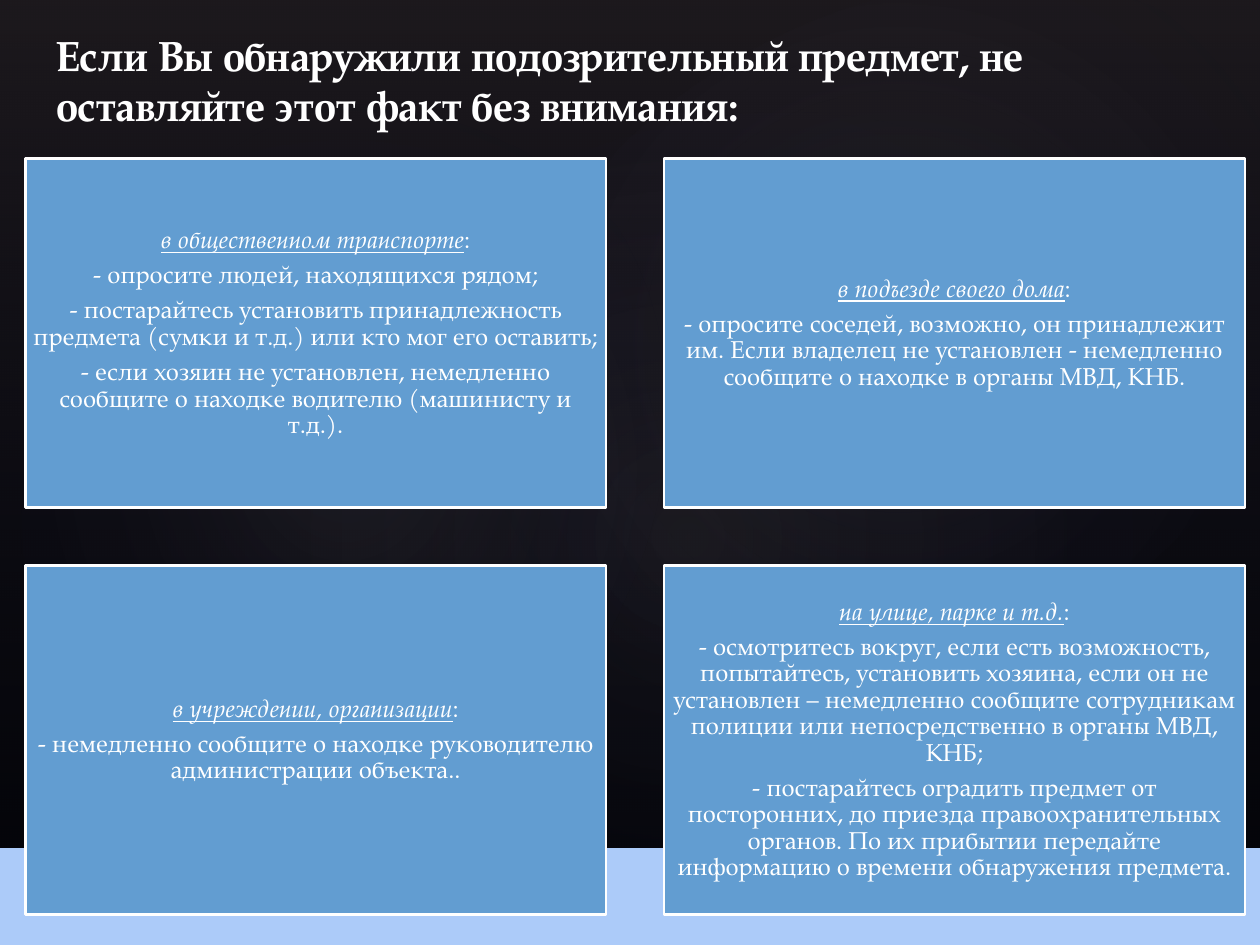
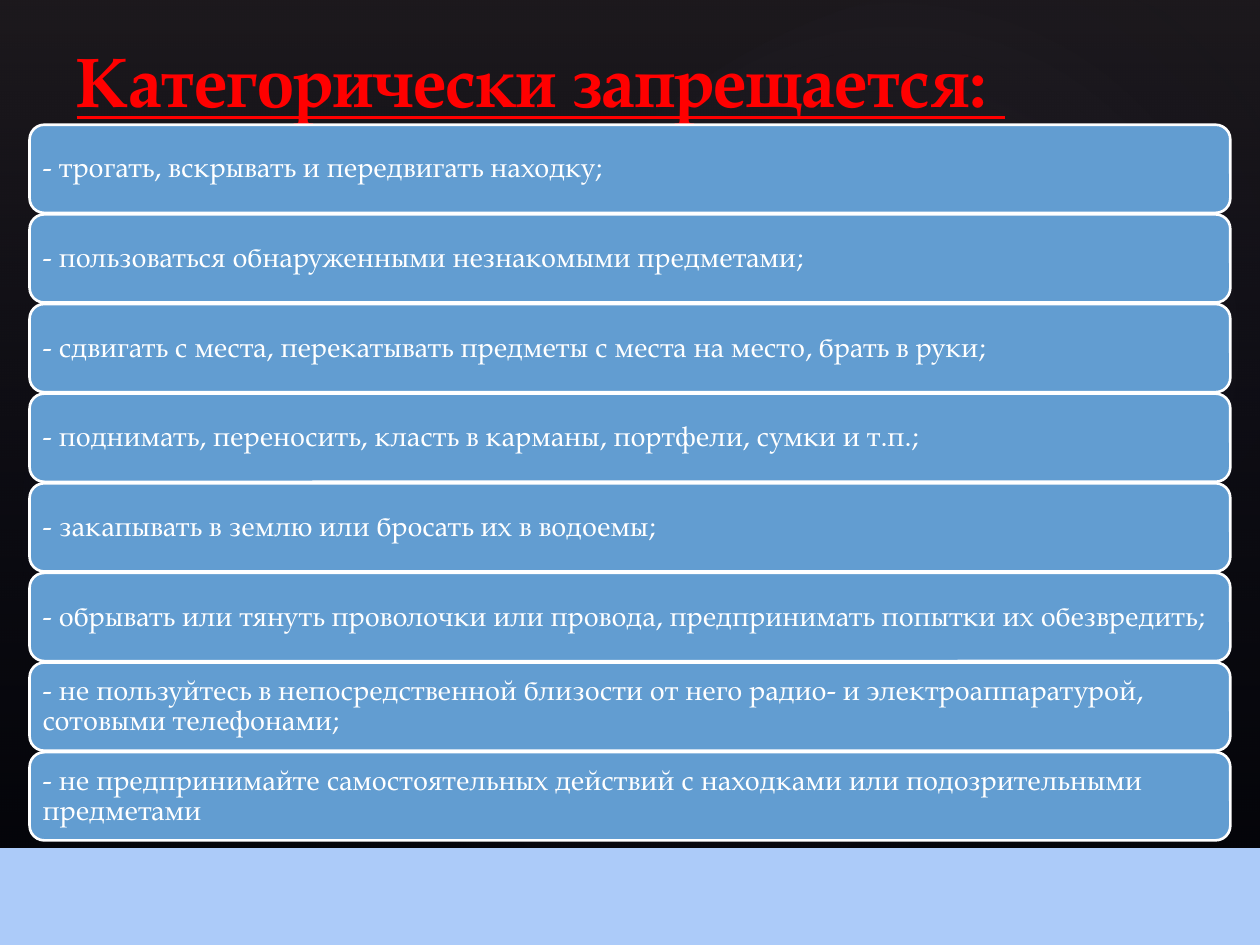
from pptx import Presentation
from pptx.dml.color import RGBColor
from pptx.enum.shapes import MSO_SHAPE as Preset
from pptx.enum.text import MSO_ANCHOR as Anchor, PP_ALIGN as Align
from pptx.oxml import parse_xml
from pptx.oxml.ns import nsdecls
from pptx.util import Inches, Pt

# Content
SAFETY_TITLE = "Если Вы обнаружили подозрительный предмет, не оставляйте этот факт без внимания:"
PLACES = [
    ("в общественном транспорте", [
        "- опросите людей, находящихся рядом;",
        "- постарайтесь установить принадлежность предмета (сумки и т.д.) или кто мог его оставить;",
        "- если хозяин не установлен, немедленно сообщите о находке водителю (машинисту и т.д.).",
    ]),
    ("в подъезде своего дома", [
        "- опросите соседей, возможно, он принадлежит им. Если владелец не установлен - "
        "немедленно сообщите о находке в органы МВД, КНБ.",
    ]),
    ("в учреждении, организации", [
        "- немедленно сообщите о находке руководителю администрации объекта..",
    ]),
    ("на улице, парке и т.д.", [
        "- осмотритесь вокруг, если есть возможность, попытайтесь, установить хозяина, если он "
        "не установлен – немедленно сообщите сотрудникам полиции или непосредственно в органы "
        "МВД, КНБ;",
        "- постарайтесь оградить предмет от посторонних, до приезда правоохранительных органов. "
        "По их прибытии передайте информацию о времени обнаружения предмета.",
    ]),
]
BAN_TITLE = "Категорически запрещается: "
BANS = [
    "- трогать, вскрывать и передвигать находку;",
    "- пользоваться обнаруженными незнакомыми предметами;",
    "- сдвигать с места, перекатывать предметы с места на место, брать в руки;",
    "- поднимать, переносить, класть в карманы, портфели, сумки и т.п.;",
    "- закапывать в землю или бросать их в водоемы;",
    "- обрывать или тянуть проволочки или провода, предпринимать попытки их обезвредить;",
    "- не пользуйтесь в непосредственной близости от него радио- и электроаппаратурой, "
    "сотовыми телефонами;",
    "- не предпринимайте самостоятельных действий с находками или подозрительными предметами",
]

# Shared style
FONT = "TeX Gyre Pagella"
BLACK = RGBColor(0x00, 0x00, 0x00)
WHITE = RGBColor(0xFF, 0xFF, 0xFF)
RED = RGBColor(0xFF, 0x00, 0x00)
BLUE = RGBColor(0x62, 0x9D, 0xD1)
PALE_BLUE = RGBColor(0xAC, 0xCB, 0xF9)
MAUVE = RGBColor(0x50, 0x46, 0x52)
LILAC = RGBColor(0xC4, 0xBC, 0xC6)
NAVY = RGBColor(0x24, 0x28, 0x52)
SLIDE_WIDTH, SLIDE_HEIGHT = 10, 7.5
BAND_HEIGHT = 0.76

# Glows: box, rotation, opacity of the centre in percent
GLOWS = [
    ((1.5, 1.14, 7.92, 6.24), 328.7, 7),
    ((-0.3, 1.28, 6.06, 4.9), 294.3, 8),
    ((3.58, 0.13, 7.09, 5.2), 328.7, 8),
]

# Grid of places and stack of bans
CARD_LEFT, CARD_TOP, CARD_WIDTH, CARD_HEIGHT, CARD_GAP = 0.2, 1.26, 4.61, 2.77, 0.46
CARD_COLUMNS = 2
ROW_TOP, LAST_ROW_TOP, ROW_WIDTH, ROW_HEIGHT = 0.99, 5.97, 9.53, 0.7


def add_shape(slide, preset, box, fill=None, line=None):
    shape = slide.shapes.add_shape(preset, *map(Inches, box))
    shape.shadow.inherit = False
    if fill is not None:
        shape.fill.solid()
        shape.fill.fore_color.rgb = fill
    if line is None:
        shape.line.fill.background()
    else:
        shape.line.color.rgb = line
        shape.line.width = Pt(1.5)
    return shape


def set_gradient(shape, stops, direction):
    """Replace the fill; stops are (position, colour, opacity) in percent."""
    stop_xml = "".join(
        f'<a:gs pos="{position * 1000}"><a:srgbClr val="{colour}">'
        f'<a:alpha val="{opacity * 1000}"/></a:srgbClr></a:gs>'
        for position, colour, opacity in stops)
    gradient = parse_xml(f'<a:gradFill {nsdecls("a")} rotWithShape="1">'
                         f'<a:gsLst>{stop_xml}</a:gsLst>{direction}</a:gradFill>')
    shape.fill.background()
    properties = shape.fill._xPr
    properties.replace(properties.find("{*}noFill"), gradient)


def write_text(shape, paragraphs, size, colour=WHITE, align=Align.LEFT, anchor=Anchor.MIDDLE,
               inset=None, line_spacing=None, space_after=None, **font_format):
    """Each paragraph is a list of (text, run format) pairs."""
    frame = shape.text_frame
    frame.word_wrap = True
    frame.vertical_anchor = anchor
    if inset is not None:
        frame.margin_left = frame.margin_right = Inches(inset)
        frame.margin_top = frame.margin_bottom = Inches(inset)
    for index, runs in enumerate(paragraphs):
        paragraph = frame.add_paragraph() if index else frame.paragraphs[0]
        paragraph.alignment = align
        paragraph.line_spacing = line_spacing
        if space_after is not None:
            paragraph.space_after = Pt(space_after)
        for text, run_format in runs:
            run = paragraph.add_run()
            run.text = text
            run.font.name = FONT
            run.font.size = Pt(size)
            run.font.color.rgb = colour
            for name, value in {**font_format, **run_format}.items():
                setattr(run.font, name, value)


def add_panel(slide, preset, box, paragraphs, size, **text_format):
    panel = add_shape(slide, preset, box, fill=BLUE, line=WHITE)
    write_text(panel, paragraphs, size, line_spacing=0.9, space_after=0.35 * size, **text_format)


def add_base_slide(presentation, title, title_box, size, **title_format):
    """Dark backdrop with glows, the title and the bottom band."""
    slide = presentation.slides.add_slide(presentation.slide_layouts[6])
    slide.background.fill.solid()
    slide.background.fill.fore_color.rgb = BLACK
    backdrop = add_shape(slide, Preset.RECTANGLE, (0, 0, SLIDE_WIDTH, SLIDE_HEIGHT))
    set_gradient(backdrop, [(0, MAUVE, 36), (100, NAVY, 10)], '<a:lin ang="5400000" scaled="0"/>')
    for box, rotation, opacity in GLOWS:
        glow = add_shape(slide, Preset.OVAL, box)
        glow.rotation = rotation
        set_gradient(glow, [(0, LILAC, opacity), (58, NAVY, 0)],
                     '<a:path path="circle">'
                     '<a:fillToRect l="50000" t="50000" r="50000" b="50000"/></a:path>')
    title_shape = slide.shapes.add_textbox(*map(Inches, title_box))
    write_text(title_shape, [[(title, {})]], size, anchor=Anchor.BOTTOM, bold=True, **title_format)
    add_shape(slide, Preset.RECTANGLE,
              (0, SLIDE_HEIGHT - BAND_HEIGHT, SLIDE_WIDTH, BAND_HEIGHT), PALE_BLUE, PALE_BLUE)
    return slide


def build_places(presentation):
    slide = add_base_slide(presentation, SAFETY_TITLE, (0.35, 0.29, 9.21, 0.79), 24)
    for index, (place, actions) in enumerate(PLACES):
        row, column = divmod(index, CARD_COLUMNS)
        box = (CARD_LEFT + column * (CARD_WIDTH + CARD_GAP),
               CARD_TOP + row * (CARD_HEIGHT + CARD_GAP), CARD_WIDTH, CARD_HEIGHT)
        heading = [(place, {"italic": True, "underline": True}), (":", {})]
        add_panel(slide, Preset.RECTANGLE, box,
                  [heading] + [[(action, {})] for action in actions],
                  14, align=Align.CENTER, inset=0.06)


def build_bans(presentation):
    slide = add_base_slide(presentation, BAN_TITLE, (0.51, 0.01, 8.98, 1), 40,
                           colour=RED, underline=True)
    pitch = (LAST_ROW_TOP - ROW_TOP) / (len(BANS) - 1)
    left = (SLIDE_WIDTH - ROW_WIDTH) / 2
    for index, ban in enumerate(BANS):
        add_panel(slide, Preset.ROUNDED_RECTANGLE,
                  (left, ROW_TOP + index * pitch, ROW_WIDTH, ROW_HEIGHT),
                  [[(ban, {})]], 16, inset=0.07)


def main():
    presentation = Presentation()
    presentation.slide_width = Inches(SLIDE_WIDTH)
    presentation.slide_height = Inches(SLIDE_HEIGHT)
    build_places(presentation)
    build_bans(presentation)
    presentation.save("out.pptx")


if __name__ == "__main__":
    main()
